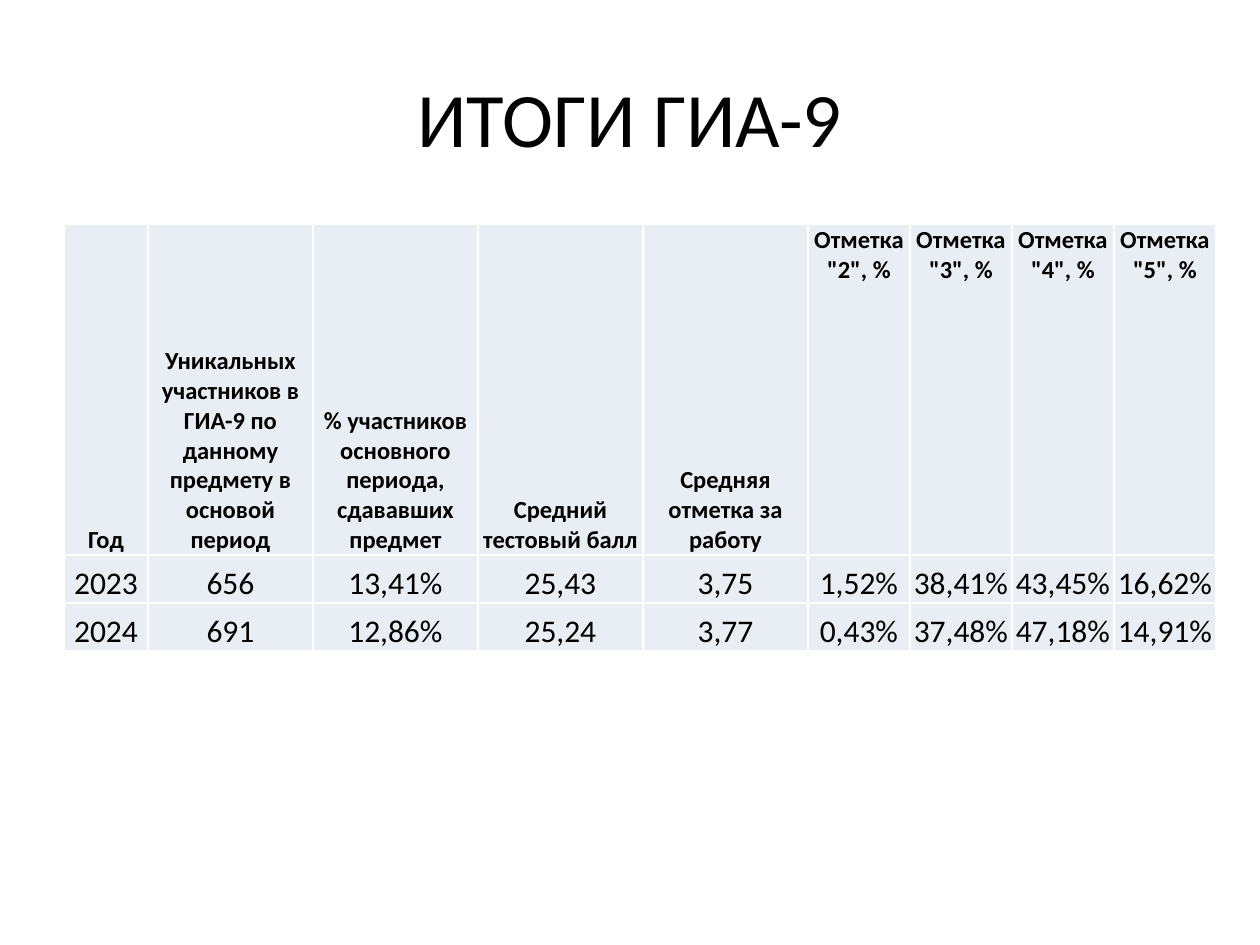
from lxml import etree
from pptx import Presentation
from pptx import util as u
from pptx.dml.color import RGBColor
from pptx.enum import text
from pptx.oxml import ns

EMU_PER_PX = 914400 / 126
COLORS = {"text": "000000", "cell": "E9EDF4", "border": "FFFFFF"}

HEADERS = [
    "Год",
    "Уникальных участников в ГИА-9 по данному предмету в основой период",
    "% участников основного периода, сдававших предмет",
    "Средний тестовый балл",
    "Средняя отметка за работу",
] + [f'Отметка "{mark}", %' for mark in range(2, 6)]
RESULTS = [
    ["2023", "656", "13,41%", "25,43", "3,75", "1,52%", "38,41%", "43,45%", "16,62%"],
    ["2024", "691", "12,86%", "25,24", "3,77", "0,43%", "37,48%", "47,18%", "14,91%"],
]
COLUMN_WIDTHS = [84] + [165] * 4 + [102] * 4
ROW_HEIGHTS = [331, 48, 48]
FIRST_MARK_COLUMN = 5


def px(length):
    return u.Emu(round(length * EMU_PER_PX))


class SlideBuilder:
    """Holds the style and the current slide."""

    font_name = "Calibri"

    def __init__(self, slide):
        self.slide = slide

    def format_paragraph(self, paragraph, size, bold=False):
        paragraph.alignment = text.PP_ALIGN.CENTER
        paragraph.font.name = self.font_name
        paragraph.font.size = u.Pt(size)
        paragraph.font.bold = bold
        paragraph.font.color.rgb = RGBColor.from_string(COLORS["text"])

    def title(self, wording, left, top, width, height, size):
        shape = self.slide.shapes.title
        shape.left, shape.top = px(left), px(top)
        shape.width, shape.height = px(width), px(height)
        shape.text_frame.text = wording
        shape.text_frame.vertical_anchor = text.MSO_ANCHOR.MIDDLE
        self.format_paragraph(shape.text_frame.paragraphs[0], size)

    def cell_borders(self, cell):
        properties = cell._tc.get_or_add_tcPr()
        for side in ("a:lnL", "a:lnR", "a:lnT", "a:lnB"):
            line = etree.SubElement(properties, ns.qn(side), w=str(u.Pt(1)))
            fill = etree.SubElement(line, ns.qn("a:solidFill"))
            etree.SubElement(fill, ns.qn("a:srgbClr"), val=COLORS["border"])

    def cell(self, cell, wording, size, bold, anchor):
        cell.text = wording
        cell.vertical_anchor = anchor
        cell.margin_left = cell.margin_right = cell.margin_top = px(1)
        cell.margin_bottom = 0
        self.format_paragraph(cell.text_frame.paragraphs[0], size, bold)
        self.cell_borders(cell)
        cell.fill.solid()
        cell.fill.fore_color.rgb = RGBColor.from_string(COLORS["cell"])

    def table(self, rows, left, top, widths, heights):
        table = self.slide.shapes.add_table(
            len(rows), len(widths), px(left), px(top), px(sum(widths)), px(sum(heights))
        ).table
        for column, width in zip(table.columns, widths):
            column.width = px(width)
        for row, height in zip(table.rows, heights):
            row.height = px(height)
        for r, values in enumerate(rows):
            header = r == 0
            for c, value in enumerate(values):
                at_top = header and c >= FIRST_MARK_COLUMN
                anchor = text.MSO_ANCHOR.TOP if at_top else text.MSO_ANCHOR.BOTTOM
                self.cell(table.cell(r, c), value, 14 if header else 18, header, anchor)


def main():
    presentation = Presentation()
    presentation.slide_width, presentation.slide_height = px(1260), px(945)
    title_only = presentation.slide_layouts[5]
    builder = SlideBuilder(presentation.slides.add_slide(title_only))

    # Title
    builder.title("ИТОГИ ГИА-9", 63, 38, 1134, 157, 44)

    # Exam results by year
    builder.table([HEADERS] + RESULTS, 64, 224, COLUMN_WIDTHS, ROW_HEIGHTS)

    presentation.save("out.pptx")


if __name__ == "__main__":
    main()
